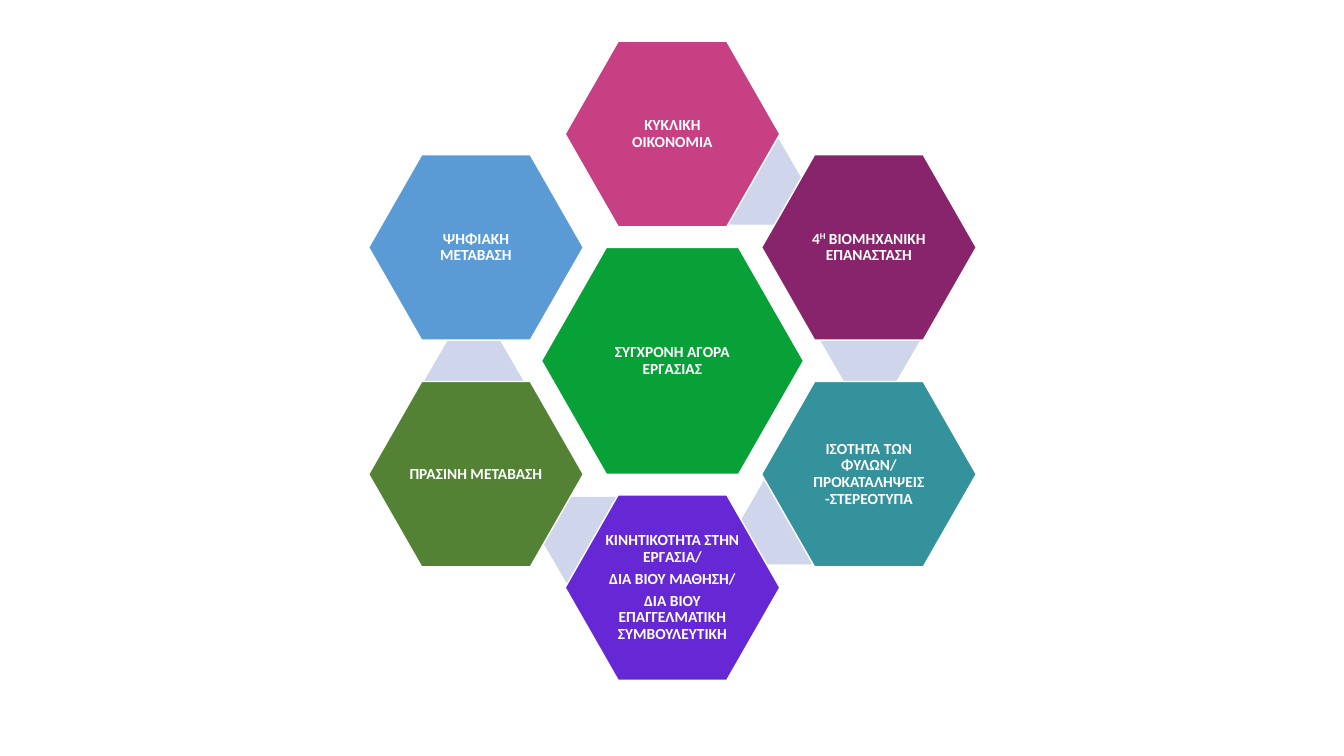
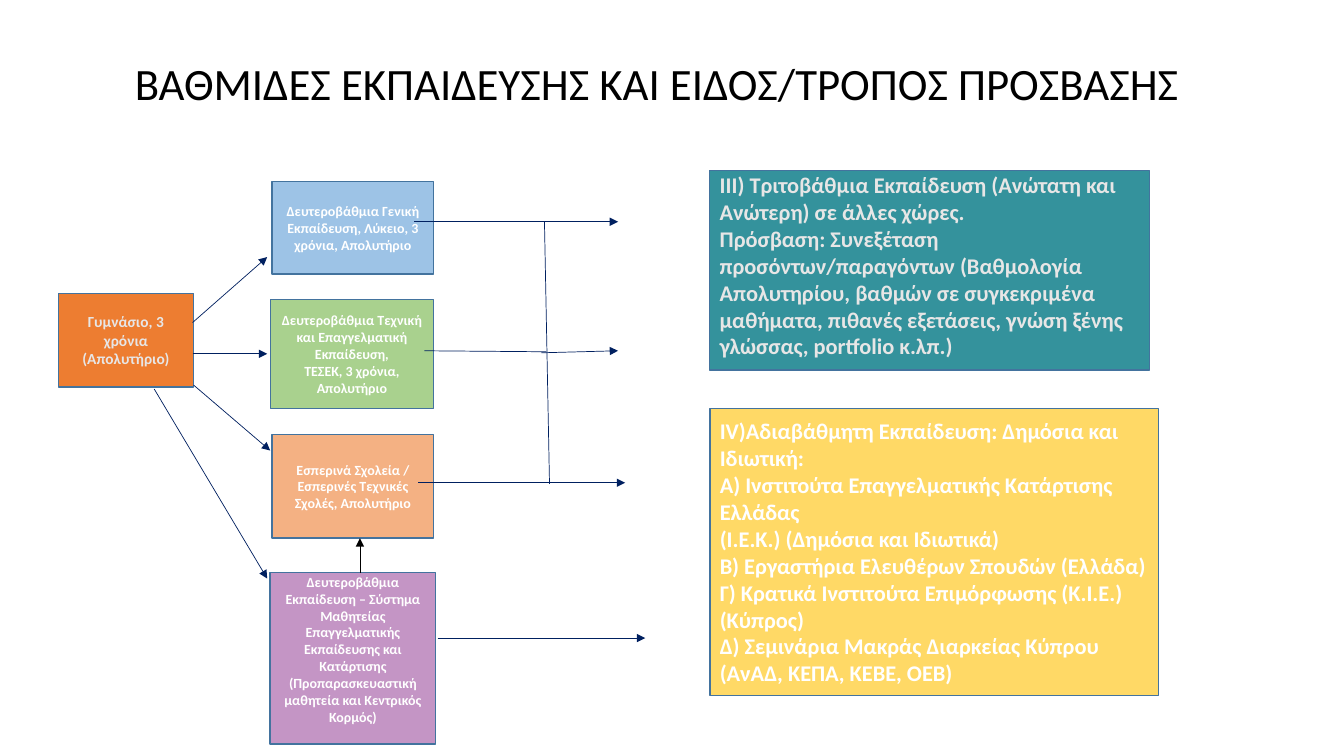
from dataclasses import dataclass
from math import cos, radians, sin

from pptx import Presentation
from pptx.dml.color import RGBColor
from pptx.enum.shapes import MSO_CONNECTOR, MSO_SHAPE
from pptx.enum.text import MSO_ANCHOR, PP_ALIGN
from pptx.oxml.ns import qn
from pptx.oxml.xmlchemy import OxmlElement
from pptx.util import Inches, Pt

FONT = "Calibri"
COLORS = {
    "white": "FFFFFF", "black": "000000", "grey": "E7E6E6",
    "green": "07A137", "pink": "C84084", "plum": "88246B",
    "teal": "34929C", "violet": "6528D4", "olive": "548235",
    "blue": "5B9BD5", "link": "CFD5EA", "orange": "ED7D31",
    "sky": "9DC3E6", "mint": "A9D18E", "salmon": "F4B183",
    "yellow": "FFD966", "lilac": "C495C5", "border": "43739E",
    "navy": "002060",
}

# Honeycomb geometry, in inches
CENTER_X, CENTER_Y, RADIUS = 6.67, 3.58, 2.25
CORE_SIZE, CELL_SIZE, LINK_SIZE = (2.6, 2.25), (2.13, 1.84), (0.98, 0.85)


@dataclass
class Cell:
    text: str  # parts between ^ marks are superscript
    fill: str
    link: tuple[float, float] | None = None  # left and top of the link behind


@dataclass
class Box:
    at: tuple[float, float, float, float]
    text: str
    fill: str
    size: int = 10
    color: str = "white"
    align: PP_ALIGN = PP_ALIGN.CENTER
    top: bool = False


@dataclass
class Line:
    start: tuple[float, float]
    end: tuple[float, float]
    arrow: bool = True
    color: str = "navy"


CELLS = [
    Cell("ΚΥΚΛΙΚΗ ΟΙΚΟΝΟΜΙΑ", "pink", (6.99, 1.38)),
    Cell("4^Η^ ΒΙΟΜΗΧΑΝΙΚΗ ΕΠΑΝΑΣΤΑΣΗ", "plum", (8.14, 2.96)),
    Cell("ΙΣΟΤΗΤΑ ΤΩΝ ΦΥΛΩΝ/ ΠΡΟΚΑΤΑΛΗΨΕΙΣ -ΣΤΕΡΕΟΤΥΠΑ", "teal", (7.34, 4.75)),
    Cell("ΚΙΝΗΤΙΚΟΤΗΤΑ ΣΤΗΝ ΕΡΓΑΣΙΑ/\nΔΙΑ ΒΙΟΥ ΜΑΘΗΣΗ/\n"
         "ΔΙΑ ΒΙΟΥ ΕΠΑΓΓΕΛΜΑΤΙΚΗ ΣΥΜΒΟΥΛΕΥΤΙΚΗ", "violet", (5.37, 4.93)),
    Cell("ΠΡΑΣΙΝΗ ΜΕΤΑΒΑΣΗ", "olive", (4.21, 3.35)),
    Cell("ΨΗΦΙΑΚΗ ΜΕΤΑΒΑΣΗ", "blue"),
]

BOXES = [
    Box((0.58, 2.91, 1.34, 0.93), "Γυμνάσιο, 3 χρόνια (Απολυτήριο)",
        "orange", 11, "grey"),
    Box((2.7, 1.8, 1.6, 0.92),
        "Δευτεροβάθμια Γενική Εκπαίδευση, Λύκειο, 3 χρόνια, Απολυτήριο", "sky"),
    Box((2.68, 2.97, 1.62, 1.08),
        "Δευτεροβάθμια Τεχνική και Επαγγελματική\nΕκπαίδευση,\n"
        "ΤΕΣΕΚ, 3 χρόνια, Απολυτήριο", "mint"),
    Box((2.7, 4.31, 1.6, 1.03),
        "Εσπερινά Σχολεία / Εσπερινές Τεχνικές Σχολές, Απολυτήριο", "salmon"),
    Box((2.68, 5.68, 1.64, 1.7),
        "Δευτεροβάθμια Εκπαίδευση – Σύστημα Μαθητείας Επαγγελματικής "
        "Εκπαίδευσης και Κατάρτισης (Προπαρασκευαστική μαθητεία και "
        "Κεντρικός Κορμός)", "lilac", top=True),
    Box((7.04, 4.05, 4.45, 2.85),
        "IV)Αδιαβάθμητη Εκπαίδευση: Δημόσια και Ιδιωτική:\n"
        "Α) Ινστιτούτα Επαγγελματικής Κατάρτισης Ελλάδας\n"
        "(Ι.Ε.Κ.) (Δημόσια και Ιδιωτικά)\n"
        "Β) Εργαστήρια Ελευθέρων Σπουδών (Ελλάδα)\n"
        "Γ) Κρατικά Ινστιτούτα Επιμόρφωσης (Κ.Ι.Ε.) (Κύπρος)\n"
        "Δ) Σεμινάρια Μακράς Διαρκείας Κύπρου (ΑνΑΔ, ΚΕΠΑ, ΚΕΒΕ, ΟΕΒ)",
        "yellow", 16, align=PP_ALIGN.LEFT),
    Box((7.04, 1.69, 4.36, 1.98),
        "III) Τριτοβάθμια Εκπαίδευση (Ανώτατη και Ανώτερη) σε άλλες χώρες.\n"
        "Πρόσβαση: Συνεξέταση προσόντων/παραγόντων (Βαθμολογία Απολυτηρίου, "
        "βαθμών σε συγκεκριμένα μαθήματα, πιθανές εξετάσεις, γνώση ξένης "
        "γλώσσας, portfolio κ.λπ.)",
        "teal", 16, "grey", PP_ALIGN.LEFT, top=True),
]

LINES = [
    # From the gymnasium to the upper secondary paths
    Line((1.91, 3.2), (2.65, 2.55)),
    Line((1.91, 3.51), (2.65, 3.51)),
    Line((1.92, 3.82), (2.68, 4.47)),
    Line((1.53, 3.86), (2.65, 5.74)),
    # From the paths to the shared vertical line
    Line((4.11, 2.2), (5.42, 2.2), arrow=False),
    Line((4.21, 3.48), (5.42, 3.49), arrow=False),
    Line((4.15, 4.79), (5.45, 4.79), arrow=False),
    Line((5.4, 2.2), (5.45, 4.8), arrow=False),
    # Onwards to the right
    Line((5.4, 2.2), (6.13, 2.2)),
    Line((5.37, 3.5), (6.13, 3.48)),
    Line((5.45, 4.79), (6.2, 4.79)),
    Line((4.34, 6.33), (6.4, 6.33)),
    # From apprenticeship up to evening schools
    Line((3.57, 5.68), (3.57, 5.34), color="black"),
]


def rgb(name: str) -> RGBColor:
    return RGBColor.from_string(COLORS[name])


def write_text(tf, text: str, size: int, color: str = "white", bold: bool = True,
               align: PP_ALIGN = PP_ALIGN.CENTER, spacing: float = 1.0) -> None:
    tf.word_wrap = True
    tf.vertical_anchor = MSO_ANCHOR.MIDDLE
    tf.text = text
    for p in tf.paragraphs:
        p.alignment = align
        p.line_spacing = spacing
        first, *rest = p.text.split("^")
        p.text = first
        for part in rest:
            p.add_run().text = part
        for i, r in enumerate(p.runs):
            r.font.name, r.font.size, r.font.bold = FONT, Pt(size), bold
            r.font.color.rgb = rgb(color)
            if i % 2:
                r.font._element.set("baseline", "30000")


def add_block(s, kind: MSO_SHAPE, at: tuple, fill: str, border: str | None):
    sp = s.shapes.add_shape(kind, *map(Inches, at))
    sp.shadow.inherit = False
    sp.fill.solid()
    sp.fill.fore_color.rgb = rgb(fill)
    if border:
        sp.line.color.rgb = rgb(border)
        sp.line.width = Pt(1)
    else:
        sp.line.fill.background()
    return sp


def add_cell(s, cell: Cell, x: float, y: float, size: tuple[float, float]) -> None:
    """Draw a labelled hexagon centred on x, y, over its link."""
    if cell.link:
        link = add_block(s, MSO_SHAPE.HEXAGON, cell.link + LINK_SIZE, "link", None)
        link.adjustments[0] = 0.29
    w, h = size
    sp = add_block(s, MSO_SHAPE.HEXAGON, (x - w / 2, y - h / 2, w, h),
                   cell.fill, "white")
    sp.adjustments[0] = 0.286
    tf = sp.text_frame
    tf.margin_left = tf.margin_right = Inches(0.02)
    tf.margin_top = tf.margin_bottom = Inches(0.02)
    write_text(tf, cell.text, 11, spacing=0.9)
    for p in tf.paragraphs[:-1]:
        p.space_after = Pt(3.85)


def add_box(s, box: Box) -> None:
    sp = add_block(s, MSO_SHAPE.RECTANGLE, box.at, box.fill, "border")
    write_text(sp.text_frame, box.text, box.size, box.color, align=box.align)
    if box.top:
        sp.text_frame.vertical_anchor = MSO_ANCHOR.TOP
        sp.text_frame.margin_top = Inches(0.01)


def add_line(s, line: Line) -> None:
    c = s.shapes.add_connector(MSO_CONNECTOR.STRAIGHT,
                               *map(Inches, line.start + line.end))
    c.line.color.rgb = rgb(line.color)
    c.line.width = Pt(0.5)
    spPr = c._element.spPr
    if line.arrow:
        tail = OxmlElement("a:tailEnd")
        tail.set("type", "triangle")
        spPr.find(qn("a:ln")).append(tail)
    spPr.append(OxmlElement("a:effectLst"))


def add_title(s, text: str) -> None:
    tb = s.shapes.add_textbox(*map(Inches, (0.92, 0.4, 11.2, 0.9)))
    write_text(tb.text_frame, text, 32, "black", bold=False, spacing=0.9)


def build_honeycomb(s) -> None:
    add_cell(s, Cell("ΣΥΓΧΡΟΝΗ ΑΓΟΡΑ ΕΡΓΑΣΙΑΣ", "green"),
             CENTER_X, CENTER_Y, CORE_SIZE)
    # Ring, clockwise from the top
    for i, cell in enumerate(CELLS):
        angle = radians(i * 360 / len(CELLS))
        add_cell(s, cell, CENTER_X + RADIUS * sin(angle),
                 CENTER_Y - RADIUS * cos(angle), CELL_SIZE)


def build_pathways(s) -> None:
    add_title(s, "ΒΑΘΜΙΔΕΣ ΕΚΠΑΙΔΕΥΣΗΣ ΚΑΙ ΕΙΔΟΣ/ΤΡΟΠΟΣ ΠΡΟΣΒΑΣΗΣ")
    for box in BOXES:
        add_box(s, box)
    for line in LINES:
        add_line(s, line)


def main() -> None:
    prs = Presentation()
    prs.slide_width, prs.slide_height = Inches(13.33), Inches(7.5)
    for build in (build_honeycomb, build_pathways):
        build(prs.slides.add_slide(prs.slide_layouts[6]))
    prs.save("out.pptx")


if __name__ == "__main__":
    main()
